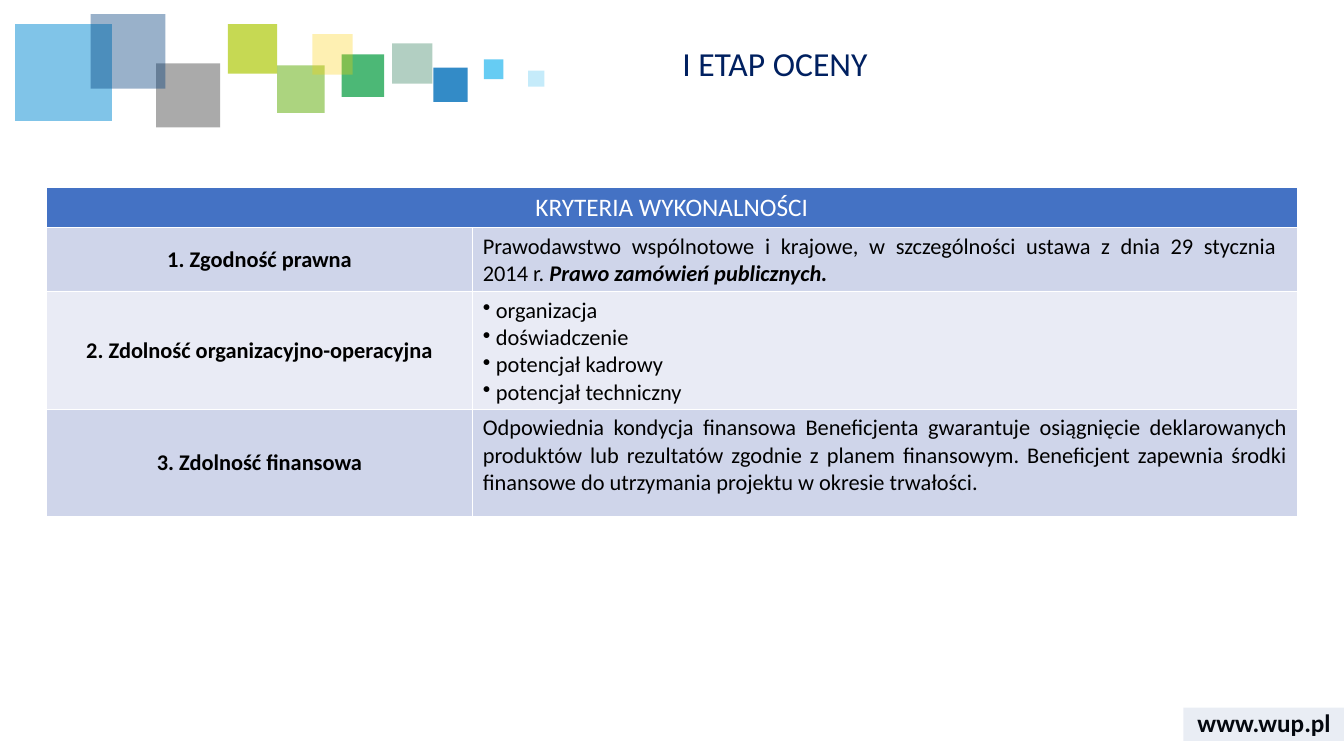
from dataclasses import dataclass
from lxml import etree
from pptx import Presentation, util as u
from pptx.dml.color import RGBColor
from pptx.enum import shapes, text
from pptx.oxml import ns

COLS, ROWS = 133.33, 75
SLIDE_W, SLIDE_H = u.Inches(13.33), u.Inches(7.5)
ALIGN = text.PP_ALIGN


@dataclass(frozen=True)
class Theme:
    font: str = "Calibri"
    title: int = 24
    heading: int = 18
    body: int = 16
    ink: str = "000000"
    navy: str = "002060"
    white: str = "FFFFFF"
    header: str = "4472C4"
    bands: tuple = ("CFD5EA", "E9EBF5")
    footer: str = "2F5597"


T = Theme()

SQUARES = [
    (38.9, 4.3, 4, "006138", 30),
    (43, 6.7, 3.4, "006EB9", 80),
    (33.9, 5.4, 4.2, "009A3C", 70),
    (1.5, 2.4, 9.6, "028BD3", 50),
    (27.5, 6.5, 4.7, "75B82A", 60),
    (15.5, 6.3, 6.35, "575757", 50),
    (9, 1.4, 7.4, "003D7C", 40),
    (48, 5.9, 1.95, "40C0F1", 80),
    (22.6, 2.4, 4.9, "AFCA0B", 70),
    (31, 3.4, 4, "FED000", 30),
    (52.4, 7, 1.6, "40C0F1", 30),
]

CRITERIA = [
    ("1. Zgodność prawna",
     [[("Prawodawstwo wspólnotowe i krajowe, w szczególności ustawa "
        "z dnia 29 stycznia \n2014 r. ", {}),
       ("Prawo zamówień publicznych. ", {"bold": True, "italic": True})]], False),
    ("2. Zdolność organizacyjno-operacyjna",
     ["organizacja", "doświadczenie", "potencjał kadrowy", "potencjał techniczny"], True),
    ("3. Zdolność finansowa",
     ["Odpowiednia kondycja finansowa Beneficjenta gwarantuje osiągnięcie "
      "deklarowanych produktów lub rezultatów zgodnie z planem finansowym. "
      "Beneficjent zapewnia środki finansowe do utrzymania projektu "
      "w okresie trwałości. "], False),
]


def col(n):
    return round(SLIDE_W * n / COLS)


def row(n):
    return round(SLIDE_H * n / ROWS)


def box(left, top, width, height):
    return col(left), row(top), col(width), row(height)


def rgb(value):
    return RGBColor.from_string(value)


def add_bullet(p):
    pPr = p._p.get_or_add_pPr()
    pPr.set("marL", str(col(1.3)))
    pPr.set("indent", str(-col(1.3)))
    etree.SubElement(pPr, ns.qn("a:buChar")).set("char", "•")


def write(tf, paragraphs, size=T.body, color=T.ink, bold=False, italic=False,
          align=ALIGN.LEFT, bullet=False, spacing=None):
    for i, content in enumerate(paragraphs):
        p = tf.add_paragraph() if i else tf.paragraphs[0]
        p.alignment = align
        if spacing:
            p.line_spacing = spacing
        if bullet:
            add_bullet(p)
        pieces = [(content, {})] if isinstance(content, str) else content
        for words, style in pieces:
            for n, line in enumerate(words.split("\n")):
                if n:
                    p.add_line_break()
                r = p.add_run()
                r.text = line
                r.font.name = T.font
                r.font.size = u.Pt(size)
                r.font.color.rgb = rgb(color)
                r.font.bold = style.get("bold", bold)
                r.font.italic = style.get("italic", italic)


def add_text(s, place, words, anchor=text.MSO_ANCHOR.TOP, **style):
    tf = s.shapes.add_textbox(*place).text_frame
    tf.word_wrap = True
    tf.vertical_anchor = anchor
    write(tf, [words], **style)


def add_rect(s, place, color, opacity):
    sp = s.shapes.add_shape(shapes.MSO_SHAPE.RECTANGLE, *place)
    sp.shadow.inherit = False
    sp.line.fill.background()
    sp.fill.solid()
    sp.fill.fore_color.rgb = rgb(color)
    tint = sp.fill._xPr.find(".//" + ns.qn("a:srgbClr"))
    etree.SubElement(tint, ns.qn("a:alpha")).set("val", str(opacity * 1000))


def style_cell(cell, fill, anchor=text.MSO_ANCHOR.TOP):
    tcPr = cell._tc.get_or_add_tcPr()
    for side in ("lnL", "lnR", "lnT", "lnB"):
        ln = etree.SubElement(tcPr, ns.qn("a:" + side), w=str(u.Pt(1)))
        paint = etree.SubElement(ln, ns.qn("a:solidFill"))
        etree.SubElement(paint, ns.qn("a:srgbClr")).set("val", T.white)
    cell.fill.solid()
    cell.fill.fore_color.rgb = rgb(fill)
    cell.vertical_anchor = anchor


def add_criteria_table(s, place, widths, heights):
    table = s.shapes.add_table(len(heights), len(widths), *place).table
    table.first_row = table.horz_banding = False
    for column, width in zip(table.columns, widths):
        column.width = col(width)
    for line, height in zip(table.rows, heights):
        line.height = row(height)

    header = table.cell(0, 0)
    header.merge(table.cell(0, 1))
    style_cell(header, T.header)
    write(header.text_frame, ["KRYTERIA WYKONALNOŚCI"], size=T.heading,
          color=T.white, align=ALIGN.CENTER)

    for i, (name, details, bullet) in enumerate(CRITERIA):
        fill = T.bands[i % 2]
        label, detail = table.cell(i + 1, 0), table.cell(i + 1, 1)
        style_cell(label, fill, text.MSO_ANCHOR.MIDDLE)
        write(label.text_frame, [name], bold=True, align=ALIGN.CENTER)
        style_cell(detail, fill)
        write(detail.text_frame, details, align=ALIGN.JUSTIFY, bullet=bullet)


def main():
    prs = Presentation()
    prs.slide_width, prs.slide_height = SLIDE_W, SLIDE_H
    s = prs.slides.add_slide(prs.slide_layouts[6])
    add_text(s, box(117.4, 69.7, 16, 4), "www.wup.pl", size=T.heading, bold=True,
             align=ALIGN.CENTER, anchor=text.MSO_ANCHOR.MIDDLE)
    for left, top, side, color, opacity in SQUARES:
        add_rect(s, box(left, top, side, side), color, opacity)
    add_rect(s, box(117.4, 70.2, 16, 3.3), T.footer, 10)
    add_criteria_table(s, box(4.6, 18.6, 124.1, 32.6),
                       widths=(42.3, 81.8), heights=(3.7, 5.8, 10.7, 10.6))
    add_text(s, box(66.7, 4.2, 63.6, 5.5), "I ETAP OCENY", size=T.title,
             color=T.navy, spacing=0.9)
    prs.save("out.pptx")


if __name__ == "__main__":
    main()
